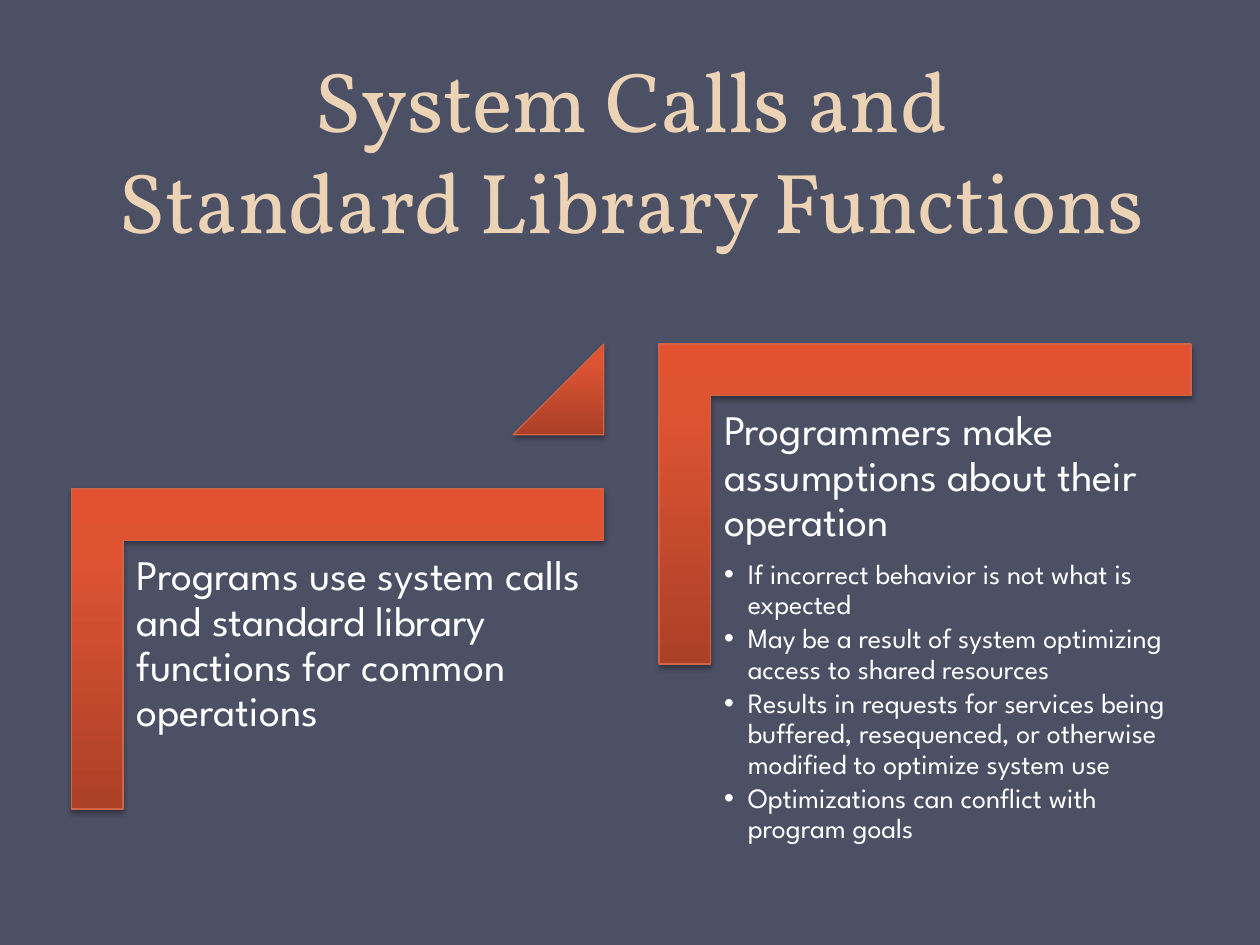
"""Build the slide on system calls and standard library functions."""
from copy import deepcopy

from lxml import etree
from pptx import Presentation
from pptx.dml import color
from pptx.enum import shapes, text
from pptx.oxml import ns
from pptx.util import Pt

GRADIENT = ((0, "AB4027"), (0.8, "DE5433"), (1, "E35230"))
COLUMNS = (
    (40.8, 279.4, "Programs use system calls and standard library functions for common operations", ()),
    (376.6, 196.6, "Programmers make assumptions about their operation", (
        "If incorrect behavior is not what is expected",
        "May be a result of system optimizing access to shared resources",
        "Results in requests for services being buffered, resequenced, or otherwise "
        "modified to optimize system use",
        "Optimizations can conflict with program goals",
    )),
)


def rgb(value):
    return color.RGBColor.from_string(value)


def write(para, words, *, font, size, fill, line, after=0, align=text.PP_ALIGN.LEFT):
    para.text = words
    para.alignment = align
    para.line_spacing = line
    para.space_before, para.space_after = Pt(0), Pt(after)
    for span in para.runs:
        span.font.name, span.font.size = font, Pt(size)
        span.font.color.rgb = rgb(fill)


def set_bullet(para, mark=None, indent=0):
    properties = para._p.get_or_add_pPr()
    properties.set("marL", str(Pt(indent)))
    properties.set("indent", str(Pt(-indent)))
    if mark:
        etree.SubElement(properties, ns.qn("a:buChar"), char=mark)
    else:
        etree.SubElement(properties, ns.qn("a:buNone"))


class Painter:
    """Holds the style and the current page."""

    heading_font, body_font = "Vollkorn", "League Spartan"
    heading_color, body_color = "EDD3B6", "FFFFFF"
    back, edge = "4B5064", "D16349"

    def __init__(self, page):
        self.page = page
        page.background.fill.solid()
        page.background.fill.fore_color.rgb = rgb(self.back)

    def place(self, box, left, top, width, height, anchor, inset):
        box.left, box.top, box.width, box.height = map(Pt, (left, top, width, height))
        frame = box.text_frame
        frame.word_wrap, frame.auto_size = True, text.MSO_AUTO_SIZE.NONE
        frame.vertical_anchor = anchor
        frame.margin_left = frame.margin_right = Pt(inset)
        frame.margin_top = frame.margin_bottom = Pt(inset)
        return frame

    def title(self, words):
        frame = self.place(self.page.shapes.title, 36.7, 20.9, 648, 126,
                           text.MSO_ANCHOR.BOTTOM, 3.6)
        write(frame.paragraphs[0], words, font=self.heading_font, size=48.6,
              fill=self.heading_color, line=Pt(58), align=text.PP_ALIGN.CENTER)

    def body(self, box, left, top, heading, points):
        frame = self.place(box, left, top, 274.3, 240.5, text.MSO_ANCHOR.TOP, 7.2)
        style = dict(font=self.body_font, fill=self.body_color, line=0.9)
        para = frame.paragraphs[0]
        write(para, heading, size=24, after=8.4, **style)
        set_bullet(para)
        for point in points:
            para = frame.add_paragraph()
            para.level = 1
            write(para, point, size=16, after=2.4, **style)
            set_bullet(para, "•", 13.5)

    def accent(self, kind, left, top, width, height, adjustments, rotation=0):
        shape = self.page.shapes.add_shape(kind, *map(Pt, (left, top, width, height)))
        shape.rotation = rotation
        for index, value in enumerate(adjustments):
            shape.adjustments[index] = value
        shape.line.color.rgb, shape.line.width = rgb(self.edge), Pt(0.75)
        self.shade(shape)
        self.drop_shadow(shape)

    def shade(self, shape):
        shape.fill.gradient()
        shape.fill.gradient_angle = 90
        gradient = shape._element.spPr.find(ns.qn("a:gradFill"))
        gradient.set("rotWithShape", "0")
        stops = gradient.find(ns.qn("a:gsLst"))
        stops.append(deepcopy(stops[-1]))
        for stop, (position, value) in zip(shape.fill.gradient_stops, GRADIENT):
            stop.position, stop.color.rgb = position, rgb(value)

    def drop_shadow(self, shape):
        shape.shadow.inherit = False
        effects = shape._element.spPr.find(ns.qn("a:effectLst"))
        shadow = etree.SubElement(effects, ns.qn("a:outerShdw"), blurRad=str(Pt(3.1)),
                                  dist=str(Pt(1.8)), dir="5400000", rotWithShape="0")
        shade = etree.SubElement(shadow, ns.qn("a:srgbClr"), val="000000")
        etree.SubElement(shade, ns.qn("a:alpha"), val="35000")

    def corner(self, left, top, width=304, height=182.9):
        shift = (width - height) / 2
        self.accent(shapes.MSO_SHAPE.CORNER, left + shift, top - shift,
                    height, width, (0.161, 0.161), 90)

    def triangle(self, left, top, side):
        self.accent(shapes.MSO_SHAPE.ISOSCELES_TRIANGLE, left, top, side, side, (1,))


def main():
    deck = Presentation()
    deck.slide_width, deck.slide_height = Pt(720), Pt(540)
    page = deck.slides.add_slide(deck.slide_layouts[3])
    painter = Painter(page)
    painter.title("System Calls and\vStandard Library Functions")
    boxes = list(page.placeholders)[1:]
    for box, (left, top, heading, points) in zip(boxes, COLUMNS):
        painter.corner(left, top)
        painter.body(box, left + 30, top + 30.2, heading, points)
    painter.triangle(293.2, 196.6, 51.8)
    deck.save("out.pptx")


if __name__ == "__main__":
    main()
